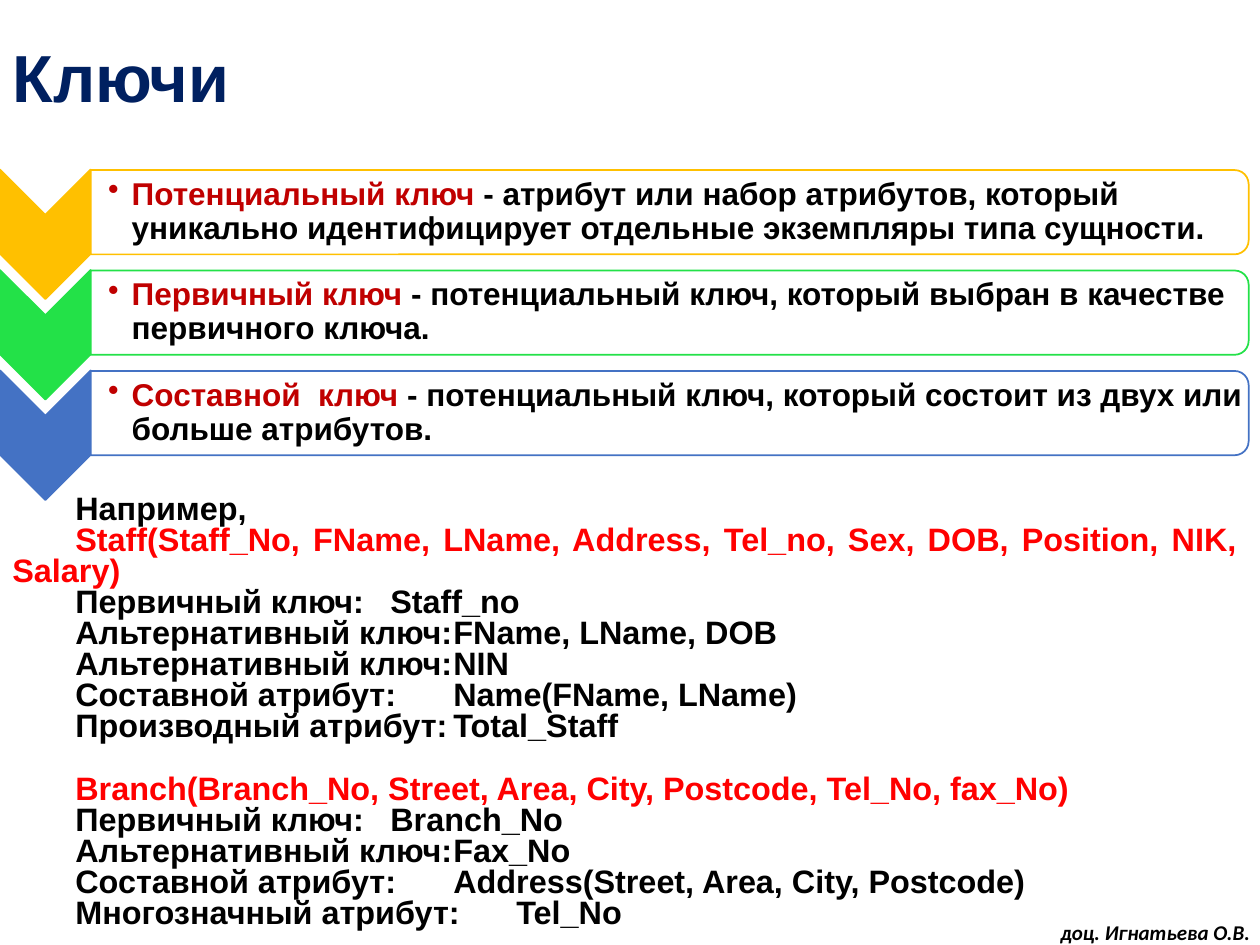
from lxml import etree
from pptx import Presentation
from pptx.dml.color import RGBColor
from pptx.enum import shapes, text
from pptx.oxml.ns import qn
from pptx.util import Pt

NAVY = RGBColor(0x00, 0x20, 0x60)
BLACK = RGBColor(0x00, 0x00, 0x00)
WHITE = RGBColor(0xFF, 0xFF, 0xFF)
RED = RGBColor(0xFF, 0x00, 0x00)
DARK_RED = RGBColor(0xC0, 0x00, 0x00)
AMBER = RGBColor(0xFF, 0xC0, 0x00)
GREEN = RGBColor(0x23, 0xE1, 0x48)
BLUE = RGBColor(0x44, 0x72, 0xC4)

TITLE = "Ключи"
AUTHOR = "доц. Игнатьева О.В."
KEYS = [
    (AMBER, "Потенциальный ключ ", "- атрибут или набор атрибутов, который "
     "уникально идентифицирует отдельные экземпляры типа сущности."),
    (GREEN, "Первичный ключ ",
     "- потенциальный ключ, который выбран в качестве первичного ключа."),
    (BLUE, "Составной  ключ ",
     "- потенциальный ключ, который состоит из двух или больше атрибутов."),
]
INTRO = "Например, "
# relation, tab stop of the values, (label, value) rows
RELATIONS = [
    ("Staff(Staff_No, FName, LName, Address, Tel_no, Sex, DOB, Position, NIK, Salary)", 272, [
        ("Первичный ключ:", "Staff_no"),
        ("Альтернативный ключ:", "FName, LName, DOB"),
        ("Альтернативный ключ:", "NIN"),
        ("Составной атрибут:", "Name(FName, LName)"),
        ("Производный атрибут:", "Total_Staff"),
    ]),
    ("Branch(Branch_No, Street, Area, City, Postcode, Tel_No, fax_No)", 277, [
        ("Первичный ключ:", "Branch_No"),
        ("Альтернативный ключ:", "Fax_No"),
        ("Составной атрибут:", "Address(Street, Area, City, Postcode)"),
        ("Многозначный атрибут:", "Tel_No"),
    ]),
]
BAND_Y, BAND_STEP = 121.3, 57.4
CHEVRON_W, CHEVRON_H, CHEVRON_DROP = 51.8, 74, 12.6
BOX_W, BOX_H = 661.7, 48.2
TEXT_W, TEXT_H = 659.5, 43.2
LINE_STEP = 17.8


def add_run(p, words, size, color, font="Arial", italic=False):
    r = p.add_run()
    r.text = words
    r.font.name, r.font.size = font, Pt(size)
    r.font.bold, r.font.italic = True, italic
    r.font.color.rgb = color


def add_turned(s, kind, left, middle, width, height, fill, line):
    """Add a shape turned by 90 degrees that shows with the given extent."""
    x, y = left + (width - height) / 2, middle - width / 2
    sp = s.shapes.add_shape(kind, Pt(x), Pt(y), Pt(height), Pt(width))
    sp.rotation = 90
    sp.shadow.inherit = False
    sp.fill.solid()
    sp.fill.fore_color.rgb = fill
    sp.line.color.rgb = line
    sp.line.width = Pt(1)


def add_text_box(s, left, top, width, height, wrap=True):
    tf = s.shapes.add_textbox(Pt(left), Pt(top), Pt(width), Pt(height)).text_frame
    tf.word_wrap = wrap
    return tf


def add_key(s, middle, color, term, meaning):
    add_turned(s, shapes.MSO_SHAPE.CHEVRON, 0, middle + CHEVRON_DROP,
               CHEVRON_W, CHEVRON_H, color, color)
    add_turned(s, shapes.MSO_SHAPE.ROUND_2_SAME_RECTANGLE, CHEVRON_W, middle,
               BOX_W, BOX_H, WHITE, color)
    tf = add_text_box(s, CHEVRON_W, middle - TEXT_H / 2, TEXT_W, TEXT_H)
    tf.vertical_anchor = text.MSO_ANCHOR.MIDDLE
    tf.margin_left = Pt(10)
    tf.margin_top = tf.margin_right = tf.margin_bottom = Pt(0.8)
    p = tf.paragraphs[0]
    p.line_spacing = 0.9
    pPr = p._p.get_or_add_pPr()
    pPr.set("marL", str(Pt(13.5)))
    pPr.set("indent", str(-Pt(13.5)))
    etree.SubElement(pPr, qn("a:buChar"), char="•")
    add_run(p, term, 18, DARK_RED)
    add_run(p, meaning, 18, BLACK)


def add_example_line(p, words, color, tab=None):
    p.alignment = text.PP_ALIGN.JUSTIFY
    p.line_spacing = 0.8
    pPr = p._p.get_or_add_pPr()
    pPr.set("indent", str(Pt(36)))
    if tab:
        tabs = etree.SubElement(pPr, qn("a:tabLst"))
        etree.SubElement(tabs, qn("a:tab"), pos=str(Pt(tab)), algn="l")
    add_run(p, words, 18.5, color)


def main():
    prs = Presentation()
    prs.slide_width, prs.slide_height = Pt(720), Pt(540)
    s = prs.slides.add_slide(prs.slide_layouts[5])

    title = s.shapes.title
    title.left, title.top, title.width, title.height = Pt(0), Pt(8), Pt(720), Pt(77)
    tf = title.text_frame
    tf.vertical_anchor = text.MSO_ANCHOR.MIDDLE
    tf.auto_size = text.MSO_AUTO_SIZE.NONE
    p = tf.paragraphs[0]
    p.alignment = text.PP_ALIGN.LEFT
    p.line_spacing = 0.9
    add_run(p, TITLE, 38, NAVY)

    tf = add_text_box(s, 0, 279.4, 713.5, 267)
    add_example_line(tf.paragraphs[0], INTRO, BLACK)
    for i, (relation, tab, rows) in enumerate(RELATIONS):
        p = tf.add_paragraph()
        p.space_before = Pt(LINE_STEP if i else 0)
        add_example_line(p, relation, RED)
        for label, value in rows:
            add_example_line(tf.add_paragraph(), f"{label}\t{value}", BLACK, tab)

    tf = add_text_box(s, 599, 522, 124.5, 21.6, wrap=False)
    add_run(tf.paragraphs[0], AUTHOR, 12, BLACK, "Calibri", italic=True)

    for i, key in enumerate(KEYS):
        add_key(s, BAND_Y + i * BAND_STEP, *key)

    prs.save("out.pptx")


if __name__ == "__main__":
    main()
